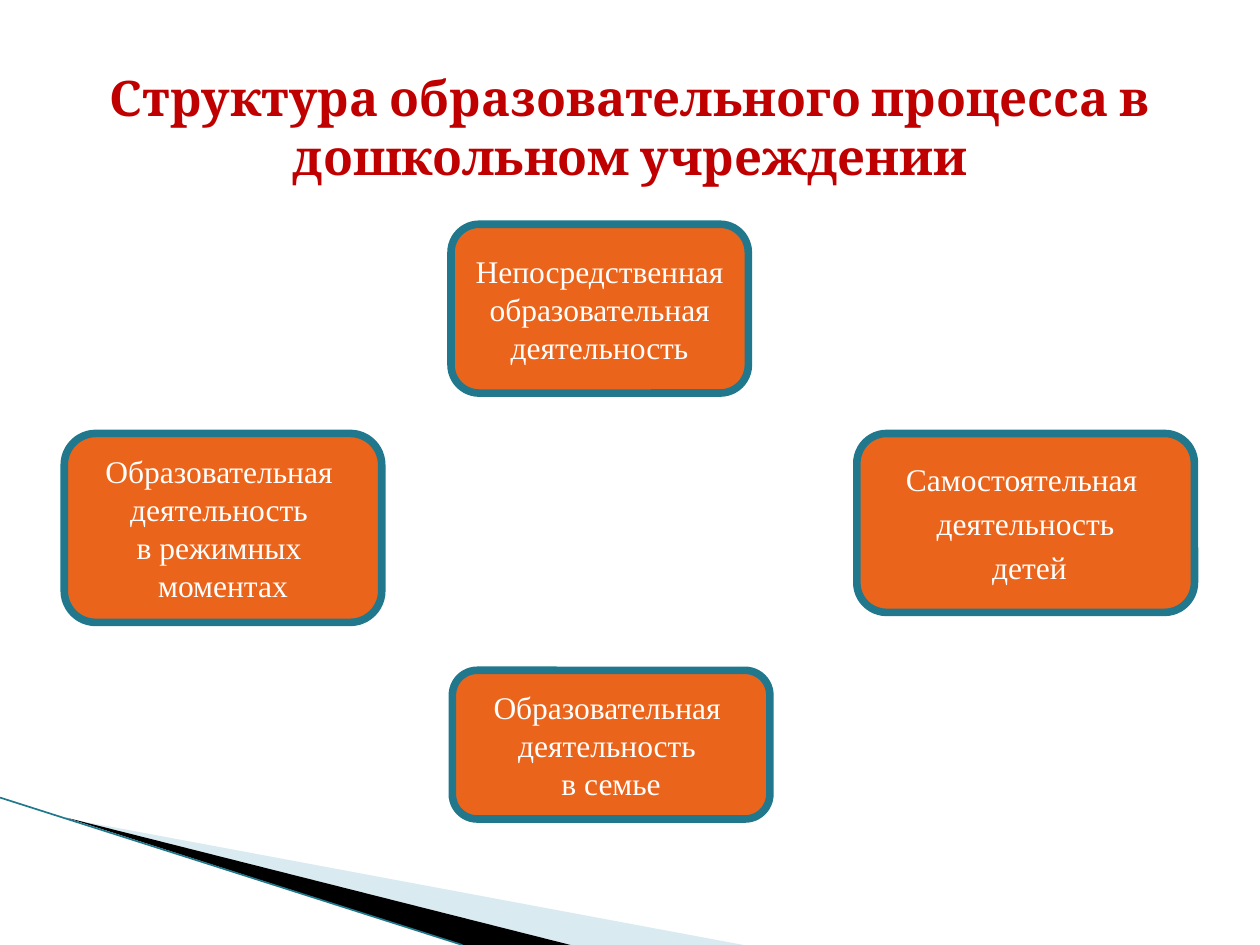
from lxml import etree
from pptx import Presentation
from pptx.dml.color import RGBColor
from pptx.enum.shapes import MSO_CONNECTOR, MSO_SHAPE
from pptx.enum.text import MSO_ANCHOR, PP_ALIGN
from pptx.oxml.ns import qn
from pptx.util import Inches, Pt

ROUNDED = MSO_SHAPE.ROUNDED_RECTANGLE
STRAIGHT = MSO_CONNECTOR.STRAIGHT
MIDDLE = MSO_ANCHOR.MIDDLE
CENTER = PP_ALIGN.CENTER

ORANGE = "EB641B"
TEAL = "21788D"
PALE_BLUE = "A0CBDC"
RED = "C00000"
WHITE = "FFFFFF"
BLACK = "000000"

ACTIVITIES = [
    (0.51, 3.44, 2.52, 1.5, 0,
     ["Образовательная ", "деятельность ", "в режимных ", "моментах"]),
    (3.58, 1.78, 2.36, 1.34, 0,
     ["Непосредственная образовательная деятельность"]),
    (6.8, 3.44, 2.68, 1.42, 3.6,
     ["Самостоятельная ", "деятельность", " детей"]),
    (3.59, 5.32, 2.52, 1.18, 0,
     ["Образовательная ", "деятельность ", "в семье"]),
]


def color(value):
    return RGBColor.from_string(value)


def add_run(paragraph, text, font_name, size, text_color, bold=False):
    paragraph.alignment = CENTER
    run = paragraph.add_run()
    run.text = text
    run.font.name = font_name
    run.font.size = Pt(size)
    run.font.bold = bold
    run.font.color.rgb = color(text_color)


def add_title(slide, text):
    title = slide.shapes.title
    title.left, title.top = Inches(0.5), Inches(0.3)
    title.width, title.height = Inches(9), Inches(1.4)
    frame = title.text_frame
    frame.word_wrap = True
    frame.vertical_anchor = MIDDLE
    add_run(frame.paragraphs[0], text, "Cambria", 28, RED, bold=True)


def add_wedge(slide, points, fill, opacity=100):
    corners = [(Inches(x), Inches(y)) for x, y in points]
    builder = slide.shapes.build_freeform(*corners[0], scale=1.0)
    builder.add_line_segments(corners[1:], close=True)
    wedge = builder.convert_to_shape()
    wedge.shadow.inherit = False
    wedge.fill.solid()
    wedge.fill.fore_color.rgb = color(fill)
    wedge.line.fill.background()
    if opacity < 100:
        fill_color = wedge._element.spPr.find(f".//{qn('a:srgbClr')}")
        alpha = etree.SubElement(fill_color, qn("a:alpha"))
        alpha.set("val", str(opacity * 1000))


def add_line(slide, start, end, line_color, width):
    ends = [Inches(value) for value in (*start, *end)]
    line = slide.shapes.add_connector(STRAIGHT, *ends)
    line.line.color.rgb = color(line_color)
    line.line.width = Pt(width)
    etree.SubElement(line._element.spPr, qn("a:effectLst"))


def add_activity(slide, left, top, width, height, gap, lines):
    bounds = [Inches(value) for value in (left, top, width, height)]
    box = slide.shapes.add_shape(ROUNDED, *bounds)
    box.shadow.inherit = False
    box.fill.solid()
    box.fill.fore_color.rgb = color(ORANGE)
    box.line.color.rgb = color(TEAL)
    box.line.width = Pt(4.33)
    frame = box.text_frame
    frame.word_wrap = True
    frame.vertical_anchor = MIDDLE
    for index, text in enumerate(lines):
        paragraph = frame.add_paragraph() if index else frame.paragraphs[0]
        if index and gap:
            paragraph.space_before = Pt(gap)
        add_run(paragraph, text, "Times New Roman", 18, WHITE)


def main():
    presentation = Presentation()
    presentation.slide_width = Inches(10)
    presentation.slide_height = Inches(7.5)
    slide = presentation.slides.add_slide(presentation.slide_layouts[5])

    add_wedge(slide, [(0.55, 6.5), (5.9, 7.5), (4.53, 7.5)], PALE_BLUE, opacity=40)
    add_wedge(slide, [(0.53, 6.49), (4.53, 7.5), (3.67, 7.5)], BLACK)
    add_line(slide, (0, 6.33), (3.67, 7.5), TEAL, 0.95)
    add_title(slide, "Структура образовательного процесса в дошкольном учреждении")
    for activity in ACTIVITIES:
        add_activity(slide, *activity)

    presentation.save("out.pptx")


if __name__ == "__main__":
    main()
